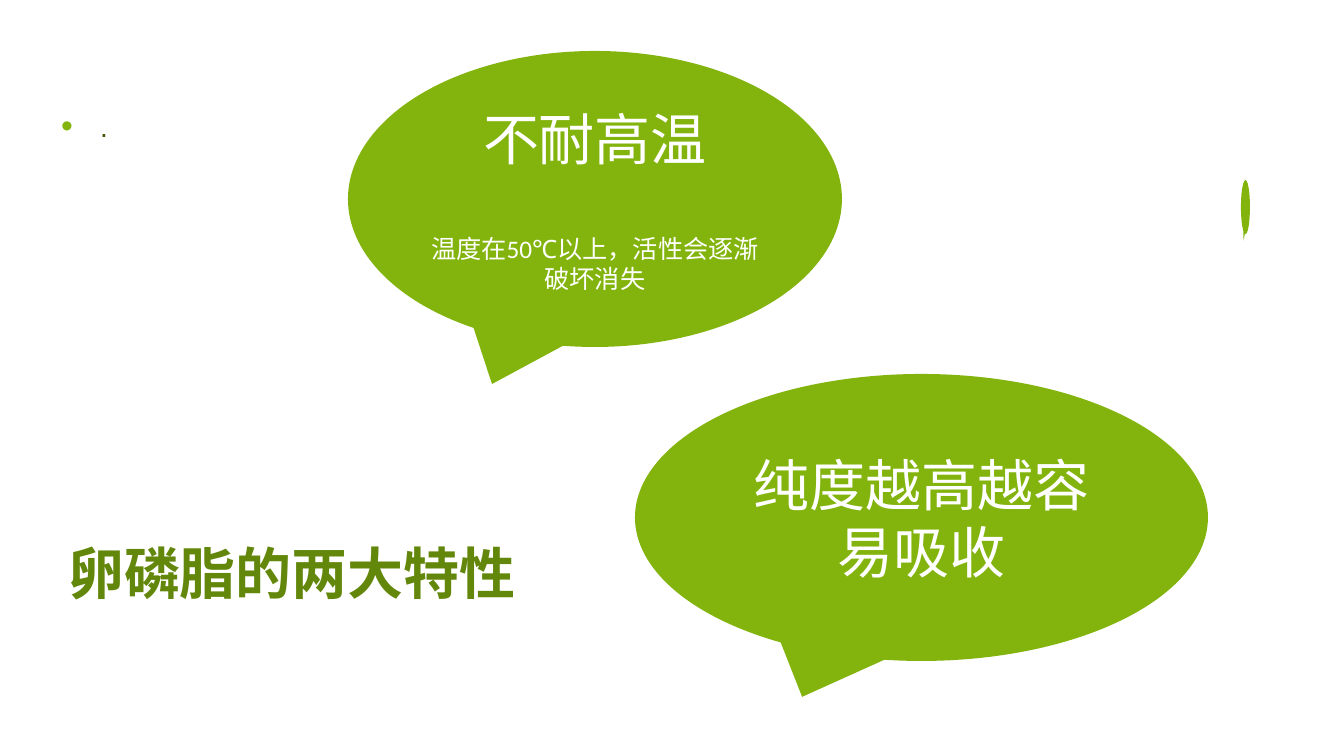
import pptx
import pptx.dml.color
import pptx.enum.shapes
import pptx.enum.text
import pptx.oxml
import pptx.oxml.ns
import pptx.util

EMU_PER_PX = 914400 / 100.8
GREEN, DARK_GREEN, BODY_GREEN, WHITE = "83B40D", "62870A", "425A07", "FFFFFF"
MIDDLE = pptx.enum.text.MSO_ANCHOR.MIDDLE
CENTER = pptx.enum.text.PP_ALIGN.CENTER

SLIDE_SIZE = (1344, 756)
TITLE = ("卵磷脂的两大特性", (58, 471, 519, 141))
BODY = (".", (51, 101, 33, 396))
# Each callout: box in px, then lines of (text, size in pt, space before in pt)
CALLOUTS = [
    ((348, 51, 494, 296), [("不耐高温", 40, 0),
                           ("温度在50℃以上，活性会逐渐破坏消失", 18, 44)]),
    ((1241, 180, 9, 54), []),
    ((635, 374, 573, 287), [("纯度越高越容易吸收", 40, 0)]),
]


def px(length):
    return pptx.util.Emu(round(length * EMU_PER_PX))


def color(value):
    return pptx.dml.color.RGBColor.from_string(value)


def set_font(paragraph, name, size, value, bold=False):
    font = paragraph.font
    font.name, font.size, font.bold = name, pptx.util.Pt(size), bold
    font.color.rgb = color(value)


def place(shape, box):
    shape.left, shape.top, shape.width, shape.height = map(px, box)


def fill_placeholder(placeholder, text, box, anchor):
    """Move a placeholder, write its single paragraph and return that paragraph."""
    place(placeholder, box)
    frame = placeholder.text_frame
    frame.text = text
    frame.word_wrap = True
    frame.auto_size = pptx.enum.text.MSO_AUTO_SIZE.NONE
    frame.vertical_anchor = anchor
    paragraph = frame.paragraphs[0]
    paragraph.space_before = pptx.util.Pt(0)
    return paragraph


def add_bullet(paragraph):
    properties = paragraph._p.get_or_add_pPr()
    properties.set("marL", str(px(39)))
    properties.set("indent", str(-px(39)))
    namespace = pptx.oxml.ns.nsdecls("a")
    for element in (
        f'<a:buClr {namespace}><a:srgbClr val="{GREEN}"/></a:buClr>',
        f'<a:buSzPct {namespace} val="120000"/>',
        f'<a:buFont {namespace} typeface="Arial"/>',
        f'<a:buChar {namespace} char="•"/>',
    ):
        properties.append(pptx.oxml.parse_xml(element))


def add_callout(slide, box, lines):
    callout = slide.shapes.add_shape(
        pptx.enum.shapes.MSO_SHAPE.OVAL_CALLOUT, *map(px, box))
    callout.shadow.inherit = False
    callout.fill.solid()
    callout.fill.fore_color.rgb = color(GREEN)
    callout.line.fill.background()
    frame = callout.text_frame
    frame.word_wrap = True
    frame.vertical_anchor = MIDDLE
    for index, (text, size, space_before) in enumerate(lines):
        paragraph = frame.add_paragraph() if index else frame.paragraphs[0]
        paragraph.text = text
        paragraph.alignment = CENTER
        paragraph.space_before = pptx.util.Pt(space_before)
        set_font(paragraph, "Calibri", size, WHITE)


def main():
    presentation = pptx.Presentation()
    presentation.slide_width, presentation.slide_height = map(px, SLIDE_SIZE)
    slide = presentation.slides.add_slide(presentation.slide_layouts[1])

    title = fill_placeholder(slide.shapes.title, *TITLE,
                             pptx.enum.text.MSO_ANCHOR.BOTTOM)
    title.alignment = pptx.enum.text.PP_ALIGN.LEFT
    title.line_spacing = 0.9
    set_font(title, "Montserrat", 40, DARK_GREEN, bold=True)

    body = fill_placeholder(slide.placeholders[1], *BODY,
                            pptx.enum.text.MSO_ANCHOR.TOP)
    body.alignment = pptx.enum.text.PP_ALIGN.JUSTIFY
    body.line_spacing = 1.1
    add_bullet(body)
    set_font(body, "Arial", 20, BODY_GREEN)

    for box, lines in CALLOUTS:
        add_callout(slide, box, lines)
    presentation.save("out.pptx")


if __name__ == "__main__":
    main()
